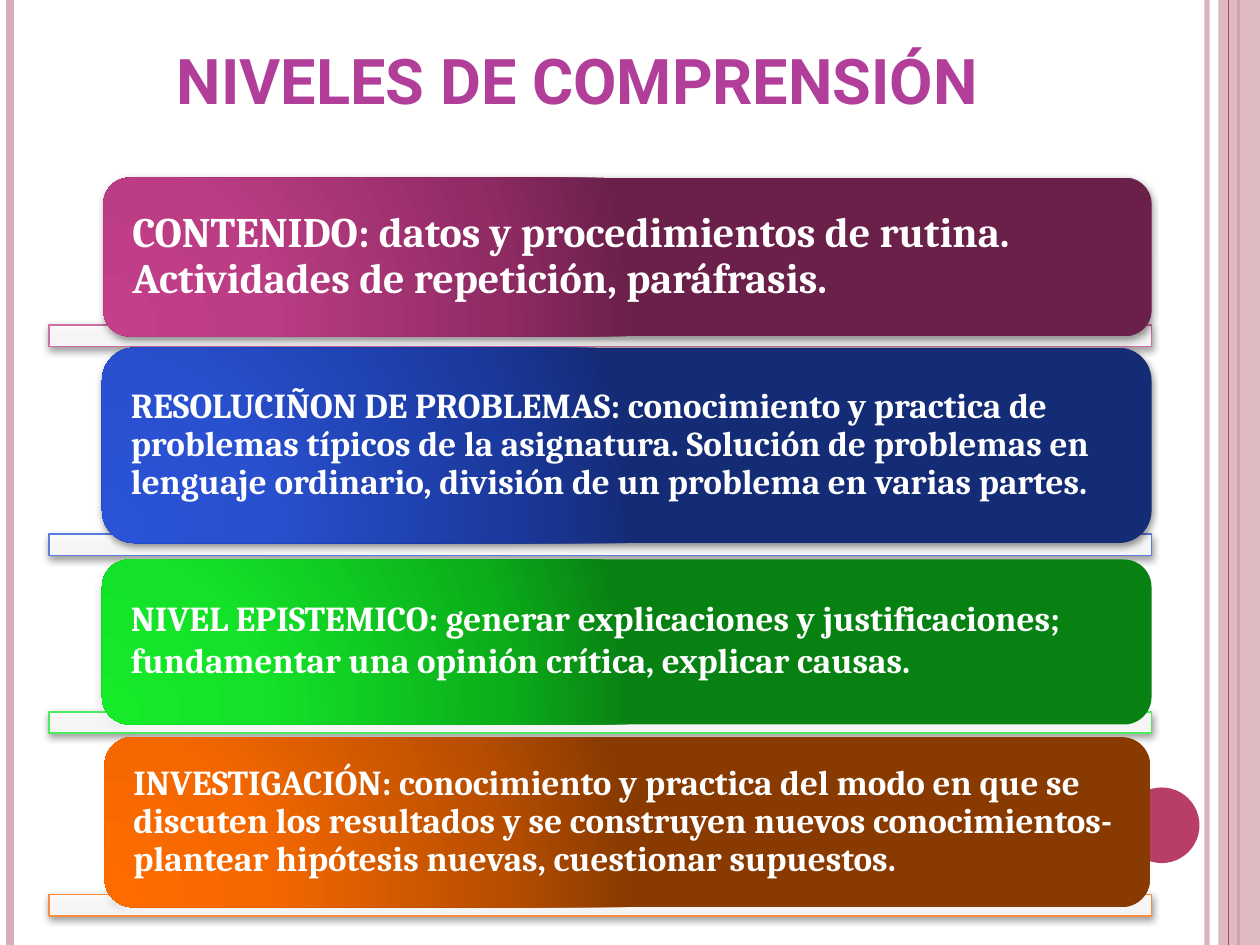
from lxml import etree
from pptx import Presentation
from pptx.dml.color import RGBColor
from pptx.enum.shapes import MSO_CONNECTOR, MSO_SHAPE
from pptx.enum.text import MSO_ANCHOR, PP_ALIGN
from pptx.oxml import parse_xml
from pptx.oxml.ns import nsdecls, qn
from pptx.util import Inches, Pt

RECT, ROUND, OVAL = MSO_SHAPE.RECTANGLE, MSO_SHAPE.ROUNDED_RECTANGLE, MSO_SHAPE.OVAL
STRAIGHT = MSO_CONNECTOR.STRAIGHT
LEFT, CENTER = PP_ALIGN.LEFT, PP_ALIGN.CENTER
TOP, MIDDLE = MSO_ANCHOR.TOP, MSO_ANCHOR.MIDDLE

COLORS = {"white": "FFFFFF", "black": "000000", "title": "B13F9A",
          "rose": "D8AFB9", "accent": "B83D68"}
TITLE_FONT = {"name": "Roboto", "size": Pt(36), "bold": True}
LEVEL_FONT = {"name": "Cambria", "bold": True}
STOPS = (0, 30, 75, 100)
TEXT_INSET = 0.23
CORNER_INSET = 0.049
BAR_LEFT, BAR_WIDTH, BAR_HEIGHT = 0.39, 8.75, 0.17

RAILS = [(9.58, 3, "rose", 93), (0.08, 4.5, "rose", 100), (9.83, 1.5, "accent", 100)]
INNER_RAIL = (9.75, 0.75, "accent", 100)

LEVELS = [
    {"box": (0.82, 1.41, 8.32, 1.26), "bar_top": 2.58, "line": "CF6DA4",
     "grad": ("C33F89", "BC3D84", "902B64", "6B204A"), "size": 24, "spacing": 0.9, "bottom": 0,
     "text": "CONTENIDO: datos y procedimientos de rutina. Actividades de repetición, paráfrasis."},
    {"box": (0.81, 2.76, 8.33, 1.55), "bar_top": 4.24, "line": "5D7BDD",
     "grad": ("2A53D7", "2950CF", "1B3A9F", "142B76"), "size": 20, "spacing": 0.9, "bottom": 0,
     "text": "RESOLUCIÑON DE PROBLEMAS: conocimiento y practica de problemas típicos de la "
             "asignatura. Solución de problemas en lenguaje ordinario, división de un problema "
             "en varias partes."},
    {"box": (0.81, 4.44, 8.33, 1.31), "bar_top": 5.65, "line": "4DEB5C",
     "grad": ("15EB29", "14E228", "0BAF1A", "088113"), "size": 20, "spacing": 1.0, "bottom": 0.06,
     "text": "NIVEL EPISTEMICO: generar explicaciones y justificaciones; fundamentar una "
             "opinión crítica, explicar causas."},
    {"box": (0.83, 5.85, 8.3, 1.35), "bar_top": 7.1, "line": "FA8D3D",
     "grad": ("FE6C00", "F56800", "B84E00", "883A00"), "size": 20, "spacing": 0.9, "bottom": 0,
     "text": "INVESTIGACIÓN: conocimiento y practica del modo en que se discuten los resultados "
             "y se construyen nuevos conocimientos- plantear hipótesis nuevas, cuestionar "
             "supuestos."},
]


def rgb(value):
    return RGBColor.from_string(value)


def set_alpha(sp, percent):
    color = next(sp._element.spPr.iter(qn("a:srgbClr")))
    etree.SubElement(color, qn("a:alpha"), val=str(percent * 1000))


def add_shadow(sp):
    effects = sp._element.spPr.find(qn("a:effectLst"))
    effects.append(parse_xml(
        f'<a:outerShdw {nsdecls("a")} blurRad="{Pt(4)}" dist="{Pt(1.6)}" dir="5400000" '
        f'rotWithShape="0"><a:srgbClr val="{COLORS["black"]}"><a:alpha val="42000"/>'
        '</a:srgbClr></a:outerShdw>'))


def set_radial(sp, colors):
    stops = "".join(f'<a:gs pos="{pos * 1000}"><a:srgbClr val="{c}"/></a:gs>'
                    for pos, c in zip(STOPS, colors))
    sp.fill.background()
    spPr = sp._element.spPr
    spPr.replace(spPr.find(qn("a:noFill")), parse_xml(
        f'<a:gradFill {nsdecls("a")} rotWithShape="1"><a:gsLst>{stops}</a:gsLst>'
        '<a:path path="circle"><a:fillToRect l="5000" t="100000" r="120000" b="10000"/>'
        '</a:path></a:gradFill>'))


def add_block(s, kind, box, fill, line=None):
    sp = s.shapes.add_shape(kind, *map(Inches, box))
    sp.shadow.inherit = False
    sp.fill.solid()
    sp.fill.fore_color.rgb = rgb(fill)
    if line:
        sp.line.color.rgb = rgb(line)
        sp.line.width = Pt(1)
    else:
        sp.line.fill.background()
    return sp


def write(sp, text, font, color, align, anchor, insets, spacing=1.0):
    tf = sp.text_frame
    tf.word_wrap = True
    tf.vertical_anchor = anchor
    for side, value in zip(("left", "top", "right", "bottom"), insets):
        setattr(tf, f"margin_{side}", Inches(value))
    p = tf.paragraphs[0]
    p.alignment = align
    p.line_spacing = spacing
    r = p.add_run()
    r.text = text
    for key, value in font.items():
        setattr(r.font, key, value)
    r.font.color.rgb = rgb(color)


def add_rail(s, top, height, rail):
    x, width, color, alpha = rail
    cx = s.shapes.add_connector(STRAIGHT, Inches(x), Inches(top), Inches(x), Inches(top + height))
    cx.line.color.rgb = rgb(COLORS[color])
    cx.line.width = Pt(width)
    if alpha < 100:
        set_alpha(cx, alpha)
    etree.SubElement(cx._element.spPr, qn("a:effectLst"))


def add_frame(s, box):
    left, top, width, height = box
    for rail in RAILS:
        add_rail(s, top, height, rail)
    band = add_block(s, RECT, (left + width - 0.33, top, 0.33, height), COLORS["rose"])
    set_alpha(band, 87)
    add_rail(s, top, height, INNER_RAIL)
    add_block(s, OVAL, (8.92, 6.25, 0.6, 0.6), COLORS["accent"])


def add_title(s, box):
    tb = s.shapes.add_textbox(*map(Inches, box))
    write(tb, "NIVELES DE COMPRENSIÓN", TITLE_FONT, COLORS["title"], CENTER, TOP,
          (0.1, 0.03, 0.1, 0.05))


def add_level(s, box, level):
    bar = add_block(s, RECT, (BAR_LEFT, level["bar_top"], BAR_WIDTH, BAR_HEIGHT),
                    COLORS["white"], level["line"])
    set_alpha(bar, 90)
    add_shadow(bar)
    card = add_block(s, ROUND, box, level["grad"][0])
    set_radial(card, level["grad"])
    add_shadow(card)
    side = TEXT_INSET - CORNER_INSET * box[3]
    write(card, level["text"], {**LEVEL_FONT, "size": Pt(level["size"])}, COLORS["white"],
          LEFT, MIDDLE, (side, 0, side, level["bottom"]), level["spacing"])


def main():
    prs = Presentation()
    prs.slide_width, prs.slide_height = Inches(10), Inches(7.5)
    s = prs.slides.add_slide(prs.slide_layouts[6])
    add_frame(s, (0, 0, 10, 7.5))
    add_title(s, (0.5, 0.3, 8.17, 1.25))
    for level in LEVELS:
        add_level(s, level["box"], level)
    prs.save("out.pptx")


if __name__ == "__main__":
    main()
